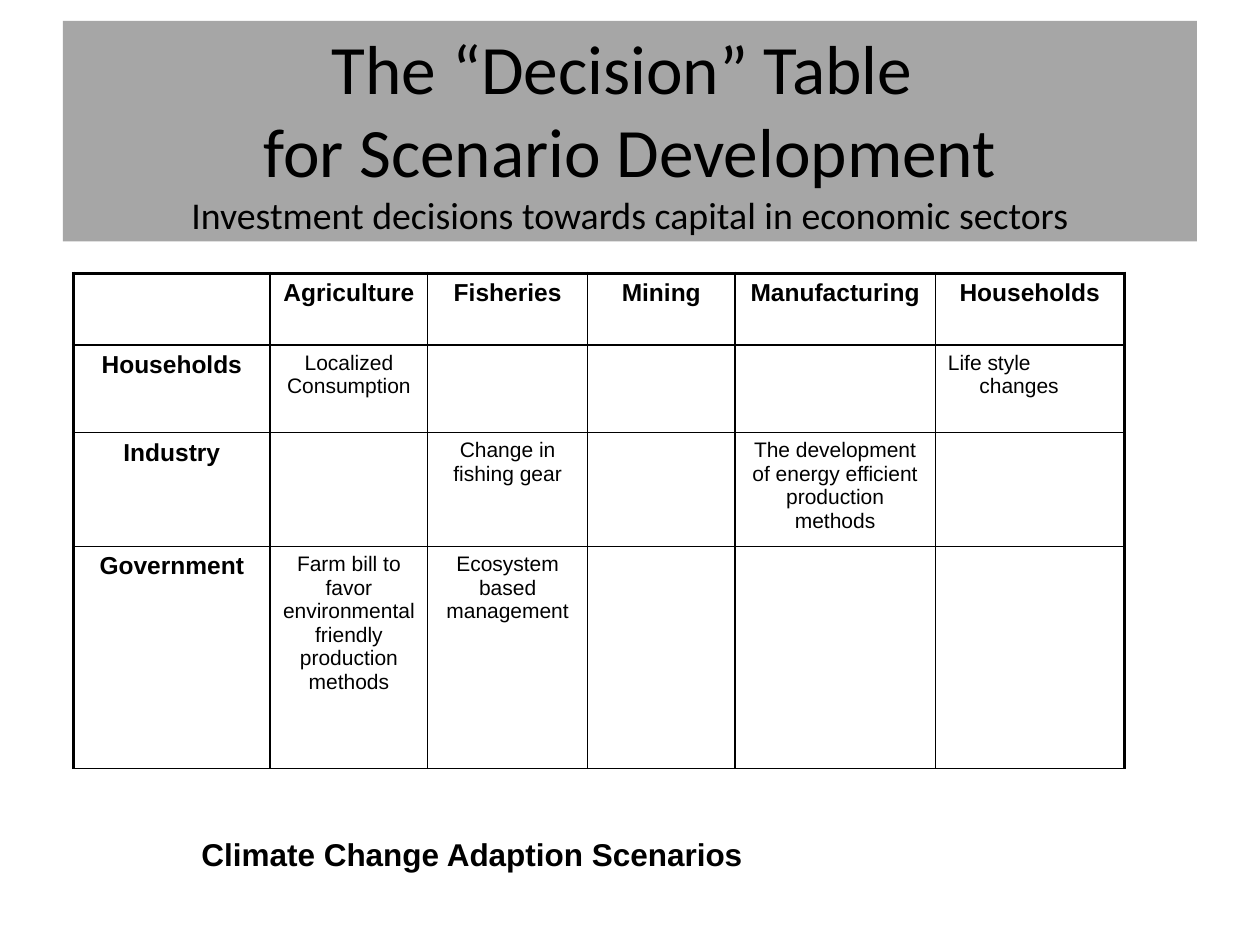
from lxml.etree import SubElement
from pptx import Presentation
from pptx.dml.color import RGBColor
from pptx.enum.shapes import MSO_SHAPE
from pptx.enum.text import MSO_ANCHOR, PP_ALIGN
from pptx.oxml.ns import qn
from pptx.util import Pt

BLACK, GRAY = "000000", "A6A6A6"
COL_WIDTHS = [112.4, 90, 91.4, 84.2, 114.5, 108]
ROW_HEIGHTS = [41, 50, 65, 127]
DECISIONS = [
    ["", "Agriculture", "Fisheries", "Mining", "Manufacturing", "Households"],
    ["Households", "Localized Consumption", "", "", "", "Life style changes"],
    ["Industry", "", "Change in fishing gear", "",
     "The development of energy efficient production methods", ""],
    ["Government", "Farm bill to favor environmental friendly production methods",
     "Ecosystem based management", "", "", ""],
]


def rgb(color):
    """Turn a hex string into a colour."""
    return RGBColor.from_string(color)


def add_run(p, text, size, font="Arial", bold=False):
    """Add one black run to a paragraph."""
    r = p.add_run()
    r.text = text
    r.font.size = Pt(size)
    r.font.name = font
    r.font.bold = bold
    r.font.color.rgb = rgb(BLACK)


def add_title(s, lines):
    """Add the gray title block with one centred line per (text, size)."""
    sp = s.shapes.add_shape(MSO_SHAPE.RECTANGLE, Pt(36), Pt(12), Pt(648), Pt(126))
    sp.shadow.inherit = False
    sp.fill.solid()
    sp.fill.fore_color.rgb = rgb(GRAY)
    sp.line.fill.background()
    tf = sp.text_frame
    tf.word_wrap = True
    tf.vertical_anchor = MSO_ANCHOR.MIDDLE
    p = tf.paragraphs[0]
    p.alignment = PP_ALIGN.CENTER
    for i, (text, size) in enumerate(lines):
        if i:
            p.add_line_break()
        add_run(p, text, size, "Calibri")


def set_borders(cell, widths):
    """Draw cell borders from a mapping of side to width in points."""
    tc_pr = cell._tc.get_or_add_tcPr()
    for i, (side, width) in enumerate(widths.items()):
        ln = SubElement(tc_pr, qn(f"a:ln{side}"), w=str(int(Pt(width))))
        fill = SubElement(ln, qn("a:solidFill"))
        SubElement(fill, qn("a:srgbClr"), val=BLACK)
        tc_pr.insert(i, ln)


def fill_cell(cell, text, heading, hanging):
    """Write the text of a cell, centred or with a hanging indent."""
    cell.fill.background()
    if not text:
        return
    p = cell.text_frame.paragraphs[0]
    if hanging:
        p_pr = p._p.get_or_add_pPr()
        p_pr.set("marL", str(int(Pt(18))))
        p_pr.set("indent", str(int(Pt(-18))))
    else:
        p.alignment = PP_ALIGN.CENTER
    add_run(p, text, 14 if heading else 12, bold=heading)


def add_decision_table(s):
    """Add the table of decision makers by economic sector."""
    n_rows, n_cols = len(ROW_HEIGHTS), len(COL_WIDTHS)
    table = s.shapes.add_table(n_rows, n_cols, Pt(42), Pt(156.2),
                               Pt(sum(COL_WIDTHS)), Pt(sum(ROW_HEIGHTS))).table
    table.first_row = table.horz_banding = False
    for col, width in zip(table.columns, COL_WIDTHS):
        col.width = Pt(width)
    for row, height in zip(table.rows, ROW_HEIGHTS):
        row.height = Pt(height)
    for i, texts in enumerate(DECISIONS):
        for j, text in enumerate(texts):
            cell = table.cell(i, j)
            last = j == n_cols - 1
            fill_cell(cell, text, i == 0 or j == 0, i > 0 and last)
            set_borders(cell, {"L": 1 if j else 2.25, "R": 2.25 if last else 1,
                               "T": 1 if i else 2.25, "B": 1})


def add_caption(s, text):
    """Add the bold caption below the table."""
    tf = s.shapes.add_textbox(Pt(108), Pt(473.8), Pt(327), Pt(29)).text_frame
    tf.word_wrap = True
    add_run(tf.paragraphs[0], text, 18, bold=True)


def main():
    """Build and save the slide."""
    prs = Presentation()
    prs.slide_width, prs.slide_height = Pt(720), Pt(540)
    s = prs.slides.add_slide(prs.slide_layouts[6])
    add_caption(s, "Climate Change Adaption Scenarios")
    add_decision_table(s)
    add_title(s, [
        ("The “Decision” Table ", 39.6),
        ("for Scenario Development", 39.6),
        ("Investment decisions towards capital in economic sectors", 21.6),
    ])
    prs.save("out.pptx")


if __name__ == "__main__":
    main()
